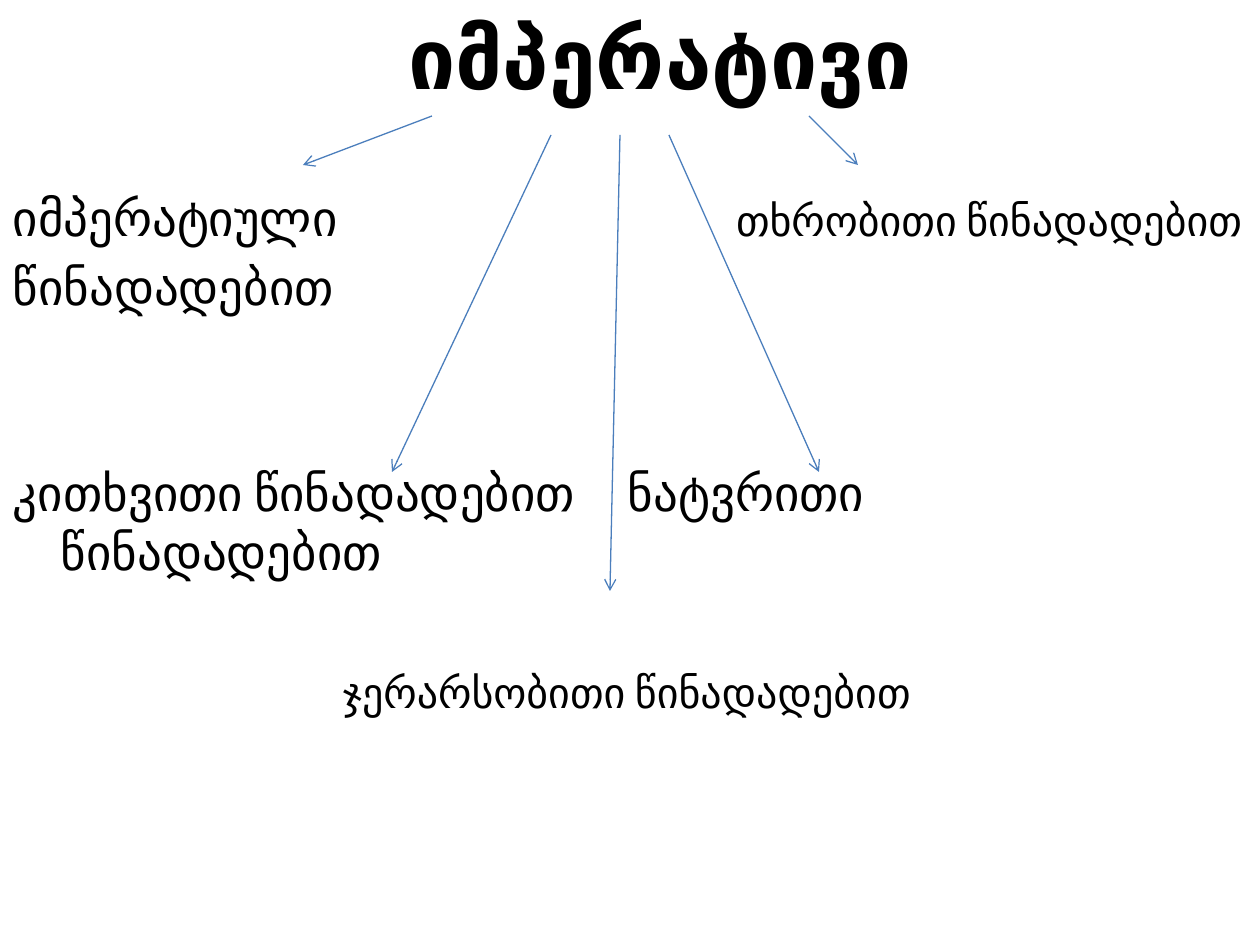
"""Build a slide that maps the imperative to the sentence types expressing it."""
from lxml import etree
from pptx import Presentation
from pptx import util as u
from pptx.dml.color import RGBColor
from pptx.enum import shapes, text
from pptx.oxml.ns import qn

PX = 914400 // 126
COLORS = {"text": "000000", "arrow": "4B7EBC"}
FONT = "Calibri"
HANG = 48

LABELS = [
    (408, 6, 600, 48, True, ["იმპერატივი"]),
    (13, 188, 480, 28, False, ["იმპერატიული", "წინადადებით"]),
    (736, 195, 524, 24, False, ["თხრობითი წინადადებით"]),
    (343, 667, 650, 24, False, ["ჯერარსობითი წინადადებით"]),
]
ARROWS = [
    (809, 116, 858, 165),
    (432, 116, 303, 165),
    (551, 135, 392, 472),
    (669, 135, 819, 472),
    (620, 135, 610, 591),
]


def px(n):
    """Turn pixels into EMU."""
    return u.Emu(n * PX)


def add_label(s, x, y, w, size, bold, lines):
    """Add a text box without insets, one paragraph a line."""
    h = round(size * 2.2) * len(lines)
    tf = s.shapes.add_textbox(px(x), px(y), px(w), px(h)).text_frame
    tf.word_wrap = True
    tf.vertical_anchor = text.MSO_ANCHOR.TOP
    tf.margin_left = tf.margin_right = tf.margin_top = tf.margin_bottom = 0
    tf.text = "\n".join(lines)
    for i, p in enumerate(tf.paragraphs):
        p.space_before = u.Pt(size * 0.2 if i else 0)
        for r in p.runs:
            r.font.name = FONT
            r.font.size = u.Pt(size)
            r.font.bold = bold
            r.font.color.rgb = RGBColor.from_string(COLORS["text"])
    return tf


def hang_with_tab(p, tab):
    """Give a paragraph a hanging indent and one tab stop."""
    pPr = p._p.get_or_add_pPr()
    pPr.set("marL", str(px(HANG)))
    pPr.set("indent", str(-px(HANG)))
    tabs = etree.SubElement(pPr, qn("a:tabLst"))
    etree.SubElement(tabs, qn("a:tab"), pos=str(px(tab)), algn="l")


def add_arrow(s, x1, y1, x2, y2):
    """Add a thin line with an open arrowhead at its end."""
    sp = s.shapes.add_connector(
        shapes.MSO_CONNECTOR.STRAIGHT, px(x1), px(y1), px(x2), px(y2))
    sp.line.color.rgb = RGBColor.from_string(COLORS["arrow"])
    sp.line.width = u.Pt(0.75)
    etree.SubElement(sp.line._get_or_add_ln(), qn("a:tailEnd"), type="arrow")
    etree.SubElement(sp._element.spPr, qn("a:effectLst"))


def main():
    """Build and save the slide."""
    prs = Presentation()
    prs.slide_width, prs.slide_height = px(1260), px(945)
    s = prs.slides.add_slide(prs.slide_layouts[6])
    for label in LABELS:
        add_label(s, *label)
    tf = add_label(s, 13, 463, 1100, 28, False,
                   ["კითხვითი წინადადებით\tნატვრითი წინადადებით"])
    hang_with_tab(tf.paragraphs[0], 670)
    tf._txBody.getparent().width = px(960)
    for arrow in ARROWS:
        add_arrow(s, *arrow)
    prs.save("out.pptx")


if __name__ == "__main__":
    main()
